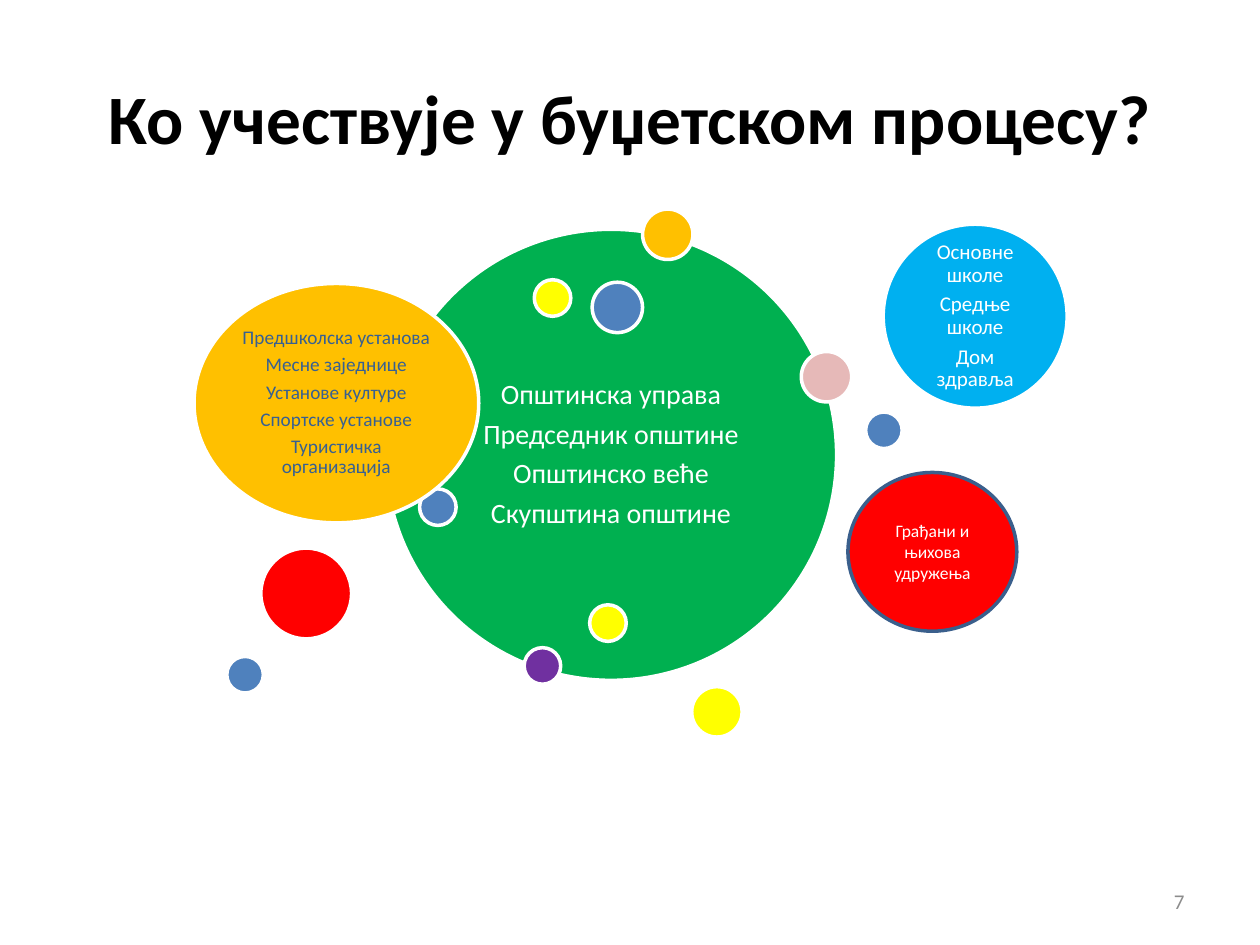
from dataclasses import dataclass

from pptx import Presentation
from pptx.dml.color import RGBColor
from pptx.enum.shapes import MSO_SHAPE as Shape
from pptx.enum.text import MSO_ANCHOR as Anchor, PP_ALIGN as Align
from pptx.util import Inches, Pt


@dataclass(frozen=True)
class Theme:
    font: str = "Calibri"
    title_size: float = 39.6
    number_size: float = 12
    outline_width: float = 2
    black: str = "000000"
    white: str = "FFFFFF"
    gray: str = "8C8C8C"
    green: str = "00B050"
    amber: str = "FFC000"
    purple: str = "7030A0"
    blue: str = "4F81BD"
    dark_blue: str = "376092"
    border_blue: str = "3A5F8C"
    sky: str = "00B0F0"
    yellow: str = "FFFF00"
    red: str = "FF0000"
    pink: str = "E6B9B8"


THEME = Theme()
TITLE = "Ко учествује у буџетском процесу?"
PAGE_NUMBER = "7"

MUNICIPALITY = ["Општинска управа", "Председник општине", "Општинско веће",
                "Скупштина општине"]
INSTITUTIONS = ["Предшколска установа", "Месне заједнице", "Установе културе",
                "Спортске установе", "Туристичка организација"]
SCHOOLS = ["Основне школе", "Средње школе", "Дом здравља"]
CITIZENS = ["Грађани и њихова удружења"]

SMALL, MEDIUM, LARGE = 0.29, 0.4, 0.72

# Back to front: left, top, width, height, fill, text settings (None for a dot)
BUBBLES = [
    (3.06, 1.82, 3.58, 3.58, THEME.green,
     dict(lines=MUNICIPALITY, size=16, color=THEME.white, inset=0.07)),
    (5.1, 1.66, MEDIUM, MEDIUM, THEME.amber, None),
    (4.16, 5.14, SMALL, SMALL, THEME.purple, None),
    (6.87, 3.27, SMALL, SMALL, THEME.blue, None),
    (5.49, 5.45, MEDIUM, MEDIUM, THEME.yellow, None),
    (4.24, 2.22, SMALL, SMALL, THEME.yellow, None),
    (3.33, 3.88, SMALL, SMALL, THEME.blue, None),
    (1.54, 2.25, 2.26, 1.9, THEME.amber,
     dict(lines=INSTITUTIONS, size=11, color=THEME.dark_blue)),
    (4.7, 2.24, MEDIUM, MEDIUM, THEME.blue, None),
    (2.07, 4.35, LARGE, LARGE, THEME.red, None),
    (7.01, 1.78, 1.46, 1.46, THEME.sky,
     dict(lines=SCHOOLS, size=12, color=THEME.white)),
    (6.36, 2.79, MEDIUM, MEDIUM, THEME.pink, None),
    (1.8, 5.21, SMALL, SMALL, THEME.blue, None),
    (4.68, 4.8, SMALL, SMALL, THEME.yellow, None),
]
CITIZENS_BUBBLE = (6.73, 3.75, 1.34, 1.26, THEME.red,
                   dict(lines=CITIZENS, size=10, color=THEME.white,
                        inset=0.1, spacing=1.0))


def write(frame, lines, size, color, align=Align.CENTER, inset=0.05,
          spacing=0.9, bold=False):
    frame.word_wrap = True
    frame.vertical_anchor = Anchor.MIDDLE
    frame.margin_left = frame.margin_right = Inches(inset)
    frame.margin_top = frame.margin_bottom = Inches(min(inset, 0.07))
    for index, line in enumerate(lines):
        paragraph = frame.paragraphs[0] if index == 0 else frame.add_paragraph()
        paragraph.alignment = align
        paragraph.line_spacing = spacing
        if len(lines) > 1:
            paragraph.space_after = Pt(round(size * 0.33, 1))
        run = paragraph.add_run()
        run.text = line
        run.font.name = THEME.font
        run.font.size = Pt(size)
        run.font.bold = bold
        run.font.color.rgb = RGBColor.from_string(color)


def add_bubble(slide, left, top, width, height, fill, label,
               outline=THEME.white):
    bubble = slide.shapes.add_shape(
        Shape.OVAL, *map(Inches, (left, top, width, height)))
    bubble.shadow.inherit = False
    bubble.fill.solid()
    bubble.fill.fore_color.rgb = RGBColor.from_string(fill)
    bubble.line.color.rgb = RGBColor.from_string(outline)
    bubble.line.width = Pt(THEME.outline_width)
    if label:
        write(bubble.text_frame, **label)


def main():
    deck = Presentation()
    deck.slide_width, deck.slide_height = Inches(10), Inches(7.5)
    slide = deck.slides.add_slide(deck.slide_layouts[5])

    title = slide.shapes.title
    title.left, title.top = Inches(0.5), Inches(0.3)
    title.width, title.height = Inches(9), Inches(1.25)
    write(title.text_frame, [TITLE], THEME.title_size, THEME.black,
          inset=0.1, spacing=1.0, bold=True)

    number = slide.shapes.add_textbox(*map(Inches, (7.17, 6.95, 2.33, 0.4)))
    write(number.text_frame, [PAGE_NUMBER], THEME.number_size, THEME.gray,
          align=Align.RIGHT, inset=0.1, spacing=1.0)

    for bubble in BUBBLES:
        add_bubble(slide, *bubble)
    add_bubble(slide, *CITIZENS_BUBBLE, outline=THEME.border_blue)

    deck.save("out.pptx")


if __name__ == "__main__":
    main()
